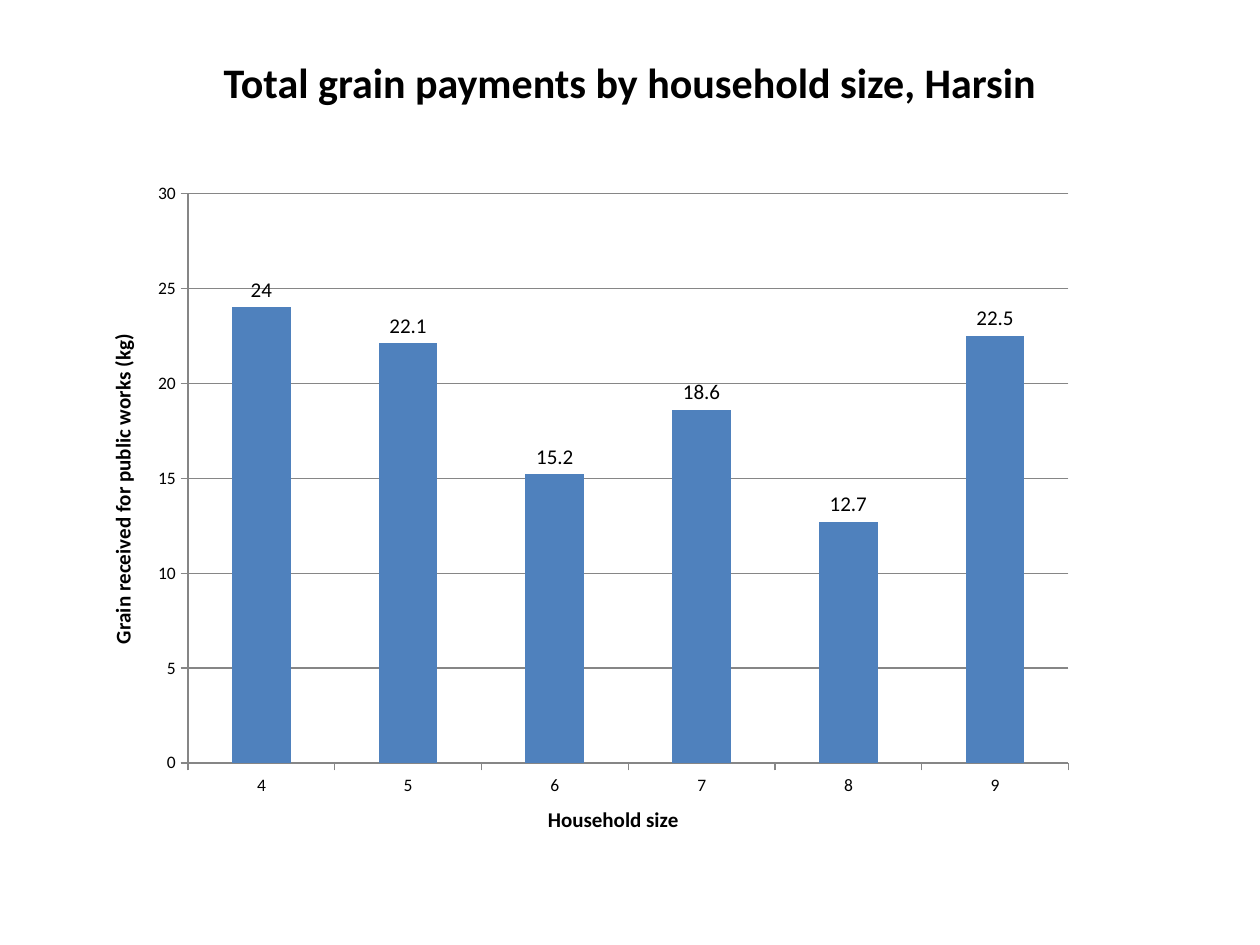
from lxml.etree import SubElement
from pptx import Presentation
from pptx.chart.data import CategoryChartData
from pptx.dml.color import RGBColor
from pptx.enum.chart import XL_CHART_TYPE, XL_LABEL_POSITION, XL_TICK_MARK
from pptx.enum.text import MSO_ANCHOR, PP_ALIGN
from pptx.oxml.ns import qn
from pptx.util import Cm, Pt

BLACK = RGBColor(0x00, 0x00, 0x00)
BAR_BLUE = RGBColor(0x4F, 0x81, 0xBD)
AXIS_GREY = RGBColor(0x86, 0x86, 0x86)

GRAIN_BY_SIZE = {"4": 24, "5": 22.1, "6": 15.2, "7": 18.6, "8": 12.7, "9": 22.5}
PLOT_BOX = {"x": 0.084, "y": 0.042, "w": 0.888, "h": 0.845}


def set_font(font, size, bold=False):
    for name, value in {"name": "Calibri", "size": Pt(size), "bold": bold}.items():
        setattr(font, name, value)
    font.color.rgb = BLACK


def style_line(line):
    line.color.rgb = AXIS_GREY
    line.width = Pt(0.75)


def place_title(slide, left, top, width, height):
    title = slide.shapes.title
    box = {"left": left, "top": top, "width": width, "height": height}
    for name, value in box.items():
        setattr(title, name, value)
    frame = title.text_frame
    frame.text = "Total grain payments by household size, Harsin"
    frame.vertical_anchor = MSO_ANCHOR.MIDDLE
    heading = frame.paragraphs[0]
    heading.alignment = PP_ALIGN.CENTER
    set_font(heading.runs[0].font, 24, bold=True)


def style_axis(axis, caption):
    axis.major_tick_mark = XL_TICK_MARK.OUTSIDE
    axis.minor_tick_mark = XL_TICK_MARK.NONE
    style_line(axis.format.line)
    set_font(axis.tick_labels.font, 10)
    frame = axis.axis_title.text_frame
    frame.text = caption
    set_font(frame.paragraphs[0].runs[0].font, 12, bold=True)


def fix_plot_box(chart):
    """Pin the inner plot area to fractions of the chart frame."""
    plot_area = chart._chartSpace.chart.plotArea
    layout = plot_area.find(qn("c:layout"))
    if layout is None:
        layout = SubElement(plot_area, qn("c:layout"))
        plot_area.insert(0, layout)
    manual = SubElement(layout, qn("c:manualLayout"))
    settings = {"layoutTarget": "inner", "xMode": "edge", "yMode": "edge", **PLOT_BOX}
    for tag, value in settings.items():
        SubElement(manual, qn(f"c:{tag}")).set("val", str(value))


def place_grain_chart(slide, left, top, width, height):
    data = CategoryChartData()
    data.categories = list(GRAIN_BY_SIZE)
    data.add_series("Series 1", list(GRAIN_BY_SIZE.values()))
    chart = slide.shapes.add_chart(
        XL_CHART_TYPE.COLUMN_CLUSTERED, left, top, width, height, data
    ).chart
    chart.has_legend = False
    chart.has_title = False
    set_font(chart.font, 10)
    fix_plot_box(chart)

    # Axes and gridlines
    style_axis(chart.category_axis, "Household size")
    grain_axis = chart.value_axis
    style_axis(grain_axis, "Grain received for public works (kg)")
    scale = {"minimum_scale": 0, "maximum_scale": 30, "major_unit": 5,
             "has_major_gridlines": True}
    for name, value in scale.items():
        setattr(grain_axis, name, value)
    style_line(grain_axis.major_gridlines.format.line)

    # Bars and their values
    bars = chart.plots[0]
    bars.vary_by_categories = False
    bars.gap_width = 150
    fill = bars.series[0].format.fill
    fill.solid()
    fill.fore_color.rgb = BAR_BLUE
    labels = bars.series[0].data_labels
    labels.show_value = True
    labels.position = XL_LABEL_POSITION.OUTSIDE_END
    set_font(labels.font, 12)


def main():
    deck = Presentation()
    deck.slide_width, deck.slide_height = Cm(25.4), Cm(19.05)
    slide = deck.slides.add_slide(deck.slide_layouts.get_by_name("Title Only"))
    place_title(slide, Cm(1.27), Cm(0.76), Cm(22.86), Cm(1.78))
    place_grain_chart(slide, Cm(2.11), Cm(3.33), Cm(19.99), Cm(13.59))
    deck.save("out.pptx")


if __name__ == "__main__":
    main()
